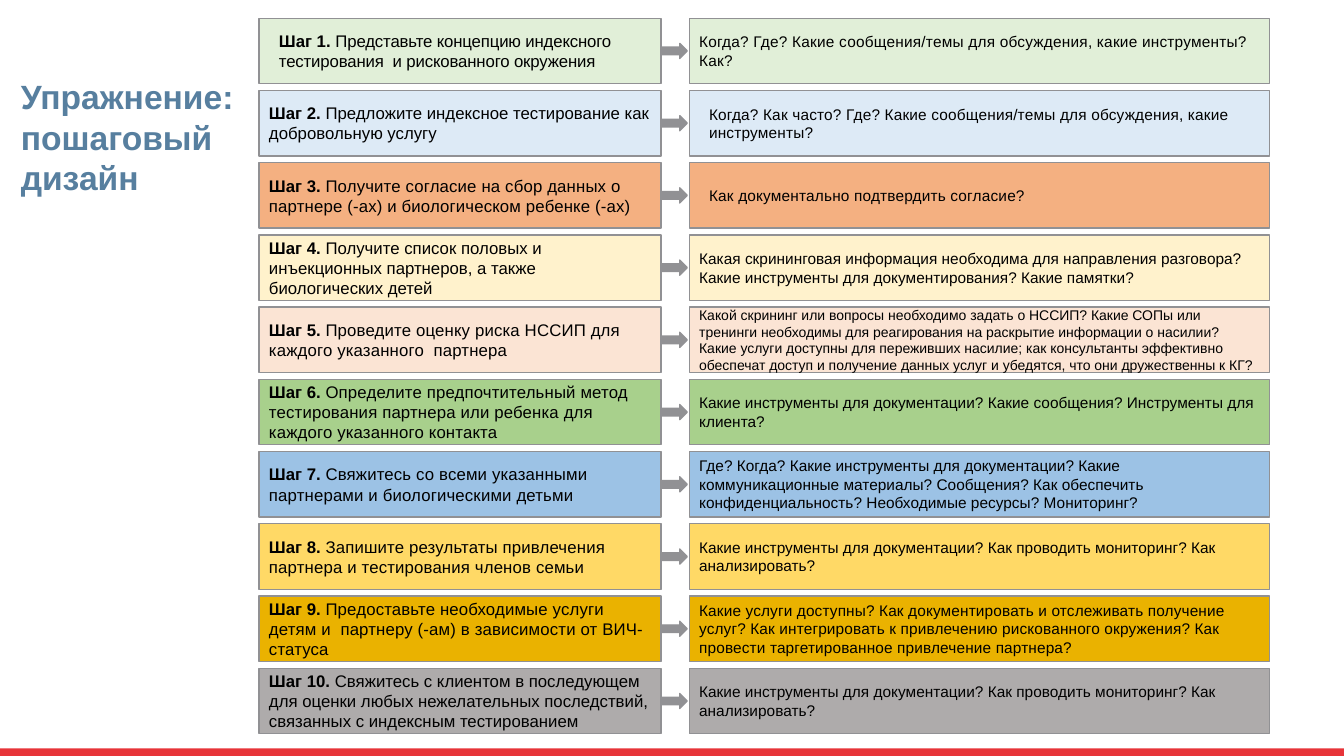
"""Build the slide on the step-by-step design exercise."""
from pptx import Presentation
from pptx.dml.color import RGBColor
from pptx.enum import shapes, text
from pptx.util import Cm, Pt

TITLE = "Упражнение:\vпошаговый\vдизайн"
DOCUMENTS = "Какие инструменты для документации? "
MONITORING = DOCUMENTS + "Как проводить мониторинг? Как анализировать?"

# fill, (step, indent, spacing), (questions, indent, spacing, size)
STEPS = [
    ("E1EFD8",
     ("Представьте концепцию индексного тестирования  и рискованного окружения", 0.25, -0.1),
     ("Когда? Где? Какие сообщения/темы для обсуждения, какие инструменты? Как?", 0, 0.15, 11)),
    ("DDEAF6",
     ("Предложите индексное тестирование как добровольную услугу", 0, 0),
     ("Когда? Как часто? Где? Какие сообщения/темы для обсуждения, какие инструменты?",
      0.25, 0.1, 11)),
    ("F4B081",
     ("Получите согласие на сбор данных о партнере (-ах) и биологическом ребенке (-ах)", 0, 0.1),
     ("Как документально подтвердить согласие?", 0.25, 0.1, 11)),
    ("FFF2CC",
     ("Получите список половых и инъекционных партнеров, а также биологических детей", 0, 0),
     ("Какая скрининговая информация необходима для направления разговора? "
      "Какие инструменты для документирования? Какие памятки?", 0, 0, 11)),
    ("FBE4D4",
     ("Проведите оценку риска НССИП для каждого указанного  партнера", 0, 0.1),
     ("Какой скрининг или вопросы необходимо задать о НССИП? Какие СОПы или тренинги "
      "необходимы для реагирования на раскрытие информации о насилии? Какие услуги доступны "
      "для переживших насилие; как консультанты эффективно обеспечат доступ и получение "
      "данных услуг и убедятся, что они дружественны к КГ?", 0, 0, 10)),
    ("A8D08C",
     ("Определите предпочтительный метод  тестирования партнера или ребенка для каждого "
      "указанного контакта", 0, 0.1),
     (DOCUMENTS + "Какие сообщения? Инструменты для клиента?", 0, 0, 11)),
    ("9CC2E5",
     ("Свяжитесь со всеми указанными партнерами и биологическими детьми", 0, 0.1),
     ("Где? Когда? " + DOCUMENTS + "Какие коммуникационные материалы? Сообщения? "
      "Как обеспечить конфиденциальность? Необходимые ресурсы? Мониторинг?", 0, 0, 11)),
    ("FFD966",
     ("Запишите результаты привлечения партнера и тестирования членов семьи", 0, 0.1),
     (MONITORING, 0, 0, 11)),
    ("EAB200",
     ("Предоставьте необходимые услуги детям и  партнеру (-ам) в зависимости от ВИЧ-статуса",
      0, 0.1),
     ("Какие услуги доступны? Как документировать и отслеживать получение услуг? "
      "Как интегрировать к привлечению рискованного окружения? Как провести "
      "таргетированное привлечение партнера?", 0, 0.08, 11)),
    ("AEABAB",
     ("Свяжитесь с клиентом в последующем для оценки любых нежелательных последствий, "
      "связанных с индексным тестированием", 0, 0),
     (MONITORING, 0, 0, 11)),
]
GREY, RED, BLUE, BLACK = "919194", "E73439", "577F9F", "000000"
TOP, PITCH, BOX_H = 0.46, 1.82, 1.65
STEP_X, STEP_W = 6.53, 10.13
QUESTION_X, QUESTION_W = 17.37, 14.63
ARROW_W, ARROW_H = 0.66, 0.38
SLIDE_W, SLIDE_H, STRIPE_H = 33.87, 19.05, 0.19


def color(value):
    return RGBColor.from_string(value)


def add_block(kind, left, top, width, height, fill, line=None):
    block = slide.shapes.add_shape(kind, Cm(left), Cm(top), Cm(width), Cm(height))
    block.shadow.inherit = False
    block.fill.solid()
    block.fill.fore_color.rgb = color(fill)
    if line:
        block.line.color.rgb = color(line)
        block.line.width = Pt(1)
    else:
        block.line.fill.background()
    return block


def style(run, size, ink, bold=False, spacing=0):
    run.font.name = "Arial"
    run.font.size = Pt(size)
    run.font.bold = bold
    run.font.color.rgb = color(ink)
    if spacing:
        run.font._element.set("spc", str(round(spacing * 100)))


def write(block, parts, indent, size):
    frame = block.text_frame
    frame.word_wrap = True
    frame.vertical_anchor = text.MSO_ANCHOR.MIDDLE
    paragraph = frame.paragraphs[0]
    paragraph.alignment = text.PP_ALIGN.LEFT
    if indent:
        paragraph._p.get_or_add_pPr().set("marL", str(Cm(indent)))
    for words, bold, spacing in parts:
        run = paragraph.add_run()
        run.text = words
        style(run, size, BLACK, bold, spacing)


deck = Presentation()
deck.slide_width, deck.slide_height = Cm(SLIDE_W), Cm(SLIDE_H)
slide = deck.slides.add_slide(deck.slide_layouts[5])

title = slide.shapes.title
title.left, title.top, title.width, title.height = Cm(0.27), Cm(1.17), Cm(7.7), Cm(4.55)
title.text_frame.text = TITLE
title.text_frame.auto_size = text.MSO_AUTO_SIZE.NONE
title.text_frame.vertical_anchor = text.MSO_ANCHOR.MIDDLE
heading = title.text_frame.paragraphs[0]
heading.alignment = text.PP_ALIGN.LEFT
for heading_run in heading.runs:
    style(heading_run, 24, BLUE, True)

RECT, ARROW = shapes.MSO_SHAPE.RECTANGLE, shapes.MSO_SHAPE.RIGHT_ARROW
for number, (fill, step, questions) in enumerate(STEPS, 1):
    top = TOP + (number - 1) * PITCH
    add_block(ARROW, STEP_X + STEP_W, top + (BOX_H - ARROW_H) / 2, ARROW_W, ARROW_H, GREY, GREY)

    step_box = add_block(RECT, STEP_X, top, STEP_W, BOX_H, fill, GREY)
    action, indent, spacing = step
    write(step_box, [(f"Шаг {number}. ", True, 0), (action, False, spacing)], indent, 12)

    question_box = add_block(RECT, QUESTION_X, top, QUESTION_W, BOX_H, fill, GREY)
    asked, indent, spacing, size = questions
    write(question_box, [(asked, False, spacing)], indent, size)

add_block(RECT, 0, SLIDE_H - STRIPE_H, SLIDE_W, STRIPE_H, RED)
deck.save("out.pptx")
